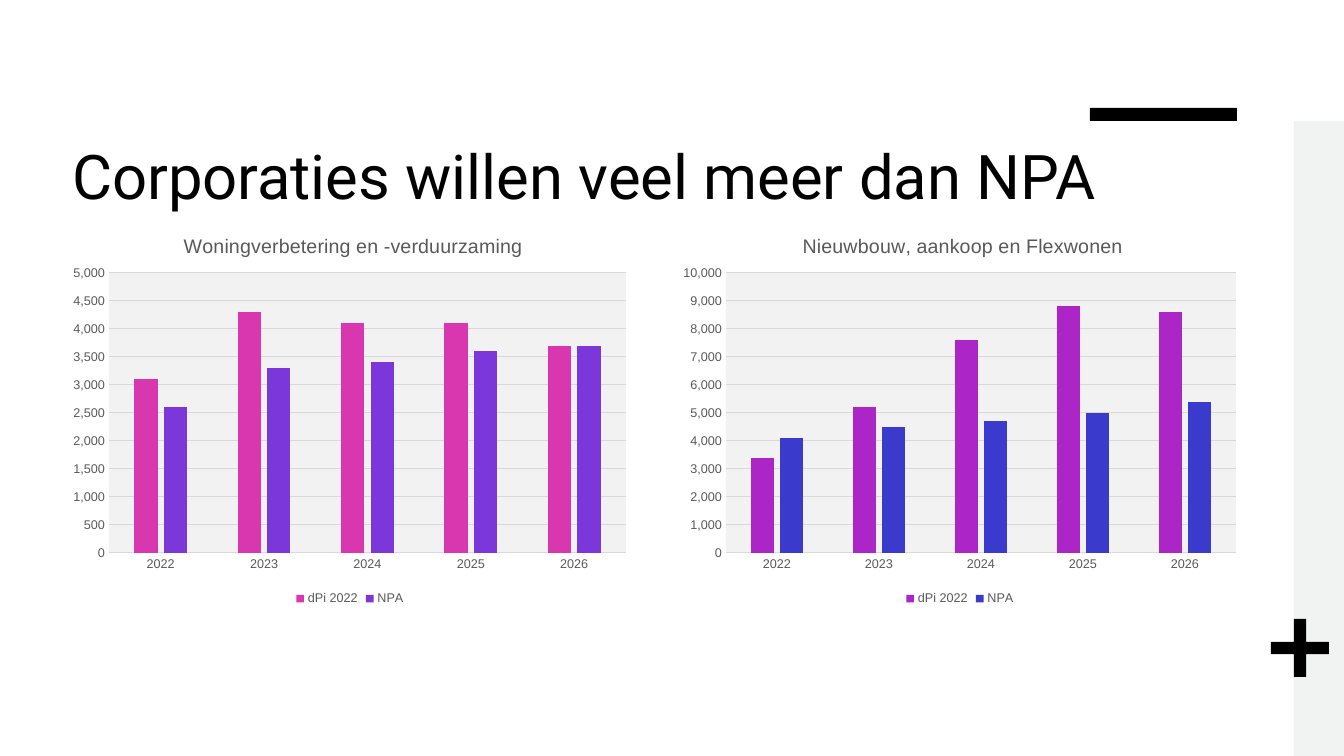
import pptx
import pptx.chart.data
import pptx.dml.color
import pptx.enum.chart
import pptx.enum.shapes
import pptx.enum.text
import pptx.oxml
import pptx.oxml.ns
import pptx.util

RGBColor = pptx.dml.color.RGBColor
BLACK = RGBColor(0, 0, 0)
WHITE = RGBColor(255, 255, 255)
PALE = RGBColor(0xF0, 0xF3, 0xF1)
PLOT_GREY = RGBColor(0xF2, 0xF2, 0xF2)
GRID_GREY = RGBColor(0xD9, 0xD9, 0xD9)
TEXT_GREY = RGBColor(0x59, 0x59, 0x59)
PINK = RGBColor(0xD9, 0x37, 0xB0)
VIOLET = RGBColor(0x7B, 0x37, 0xD9)
PURPLE = RGBColor(0xAC, 0x25, 0xC7)
BLUE = RGBColor(0x3A, 0x3A, 0xCC)

TITLE = "Corporaties willen veel meer dan NPA"
TITLE_BOX = (62, 133, 1212, 159)
RECTANGLE = pptx.enum.shapes.MSO_SHAPE.RECTANGLE
CROSS = pptx.enum.shapes.MSO_SHAPE.CROSS
DECORATIONS = [
    (RECTANGLE, (1090, 108, 147, 13), BLACK),
    (RECTANGLE, (1294, 121, 50, 635), PALE),
    (CROSS, (1271, 619, 58, 58), BLACK),
]
YEARS = ["2022", "2023", "2024", "2025", "2026"]
CHARTS = [
    {
        "title": "Woningverbetering en -verduurzaming",
        "box": (62, 213, 576, 397),
        "title_at": (118, 17),
        "plot_at": (47, 60, 517, 280),
        "maximum": 5000,
        "series": [
            ("dPi 2022", PINK, [3100, 4300, 4100, 4100, 3700]),
            ("NPA", VIOLET, [2600, 3300, 3400, 3600, 3700]),
        ],
    },
    {
        "title": "Nieuwbouw, aankoop en Flexwonen",
        "box": (672, 213, 576, 397),
        "title_at": (127, 17),
        "plot_at": (54, 60, 510, 280),
        "maximum": 10000,
        "series": [
            ("dPi 2022", PURPLE, [3400, 5200, 7600, 8800, 8600]),
            ("NPA", BLUE, [4100, 4500, 4700, 5000, 5400]),
        ],
    },
]
SCALE = 914400 / 100.8


def px(*lengths):
    return [round(length * SCALE) for length in lengths]


def assign(target, values):
    for name, value in values.items():
        setattr(target, name, value)


def format_font(font, size, color, name="Arial"):
    assign(font, {"size": pptx.util.Pt(size), "name": name, "bold": False})
    font.color.rgb = color


def format_line(line, color):
    line.width = pptx.util.Pt(0.75)
    line.color.rgb = color


def set_layout(parent, index, place, box):
    for old in parent.findall(pptx.oxml.ns.qn("c:layout")):
        parent.remove(old)
    target = '<c:layoutTarget val="inner"/>' if len(place) == 4 else ""
    modes = '<c:xMode val="edge"/><c:yMode val="edge"/>'
    fractions = "".join(
        f'<c:{tag} val="{length / total:.4f}"/>'
        for tag, length, total in zip("xywh", place, box[2:] * 2)
    )
    parent.insert(index, pptx.oxml.parse_xml(
        f'<c:layout {pptx.oxml.ns.nsdecls("c")}><c:manualLayout>'
        f"{target}{modes}{fractions}</c:manualLayout></c:layout>"
    ))


def area_fill(color):
    return pptx.oxml.parse_xml(
        f'<c:spPr {pptx.oxml.ns.nsdecls("c", "a")}><a:solidFill>'
        f'<a:srgbClr val="{color}"/></a:solidFill><a:ln><a:noFill/></a:ln></c:spPr>'
    )


def add_column_chart(slide, content):
    data = pptx.chart.data.CategoryChartData(number_format="#,##0")
    data.categories = YEARS
    for name, color, values in content["series"]:
        data.add_series(name, values)
    chart = slide.shapes.add_chart(
        pptx.enum.chart.XL_CHART_TYPE.COLUMN_CLUSTERED, *px(*content["box"]), data
    ).chart
    format_font(chart.font, 10, BLACK)

    chart.has_title = True
    chart.chart_title.include_in_layout = False
    chart.chart_title.text_frame.text = content["title"]
    format_font(chart.chart_title.text_frame.paragraphs[0].runs[0].font, 14, TEXT_GREY)

    chart.has_legend = True
    assign(chart.legend, {
        "position": pptx.enum.chart.XL_LEGEND_POSITION.BOTTOM,
        "include_in_layout": False,
    })
    format_font(chart.legend.font, 9, TEXT_GREY)

    plot = chart.plots[0]
    assign(plot, {"gap_width": 219, "overlap": -27, "vary_by_categories": False})
    for series, (name, color, values) in zip(plot.series, content["series"]):
        series.format.fill.solid()
        series.format.fill.fore_color.rgb = color

    for axis in (chart.category_axis, chart.value_axis):
        assign(axis, {
            "major_tick_mark": pptx.enum.chart.XL_TICK_MARK.NONE,
            "minor_tick_mark": pptx.enum.chart.XL_TICK_MARK.NONE,
        })
        format_font(axis.tick_labels.font, 9, TEXT_GREY)
    format_line(chart.category_axis.format.line, GRID_GREY)
    assign(chart.value_axis, {
        "minimum_scale": 0,
        "maximum_scale": content["maximum"],
        "major_unit": content["maximum"] / 10,
    })
    assign(chart.value_axis.tick_labels, {
        "number_format": "#,##0",
        "number_format_is_linked": False,
    })
    chart.value_axis.format.line.fill.background()
    format_line(chart.value_axis.major_gridlines.format.line, GRID_GREY)

    chart_element = chart.element.find(pptx.oxml.ns.qn("c:chart"))
    title_element = chart_element.find(pptx.oxml.ns.qn("c:title"))
    plot_element = chart_element.find(pptx.oxml.ns.qn("c:plotArea"))
    set_layout(title_element, 1, content["title_at"], content["box"])
    set_layout(plot_element, 0, content["plot_at"], content["box"])
    plot_element.append(area_fill(PLOT_GREY))
    chart_element.addnext(area_fill(WHITE))


def add_decoration(slide, kind, box, color):
    shape = slide.shapes.add_shape(kind, *px(*box))
    shape.shadow.inherit = False
    shape.fill.solid()
    shape.fill.fore_color.rgb = color
    shape.line.fill.background()
    if kind == CROSS:
        shape.adjustments[0] = 0.395


def format_title(title):
    assign(title, dict(zip(("left", "top", "width", "height"), px(*TITLE_BOX))))
    title.text_frame.text = TITLE
    assign(title.text_frame, {
        "vertical_anchor": pptx.enum.text.MSO_ANCHOR.TOP,
        "word_wrap": True,
    })
    paragraph = title.text_frame.paragraphs[0]
    paragraph.alignment = pptx.enum.text.PP_ALIGN.LEFT
    format_font(paragraph.runs[0].font, 44, BLACK, "Roboto")


def main():
    presentation = pptx.Presentation()
    assign(presentation, dict(zip(("slide_width", "slide_height"), px(1344, 756))))
    slide = presentation.slides.add_slide(presentation.slide_layouts[5])
    format_title(slide.shapes.title)
    for decoration in DECORATIONS:
        add_decoration(slide, *decoration)
    for content in CHARTS:
        add_column_chart(slide, content)
    presentation.save("out.pptx")


if __name__ == "__main__":
    main()
